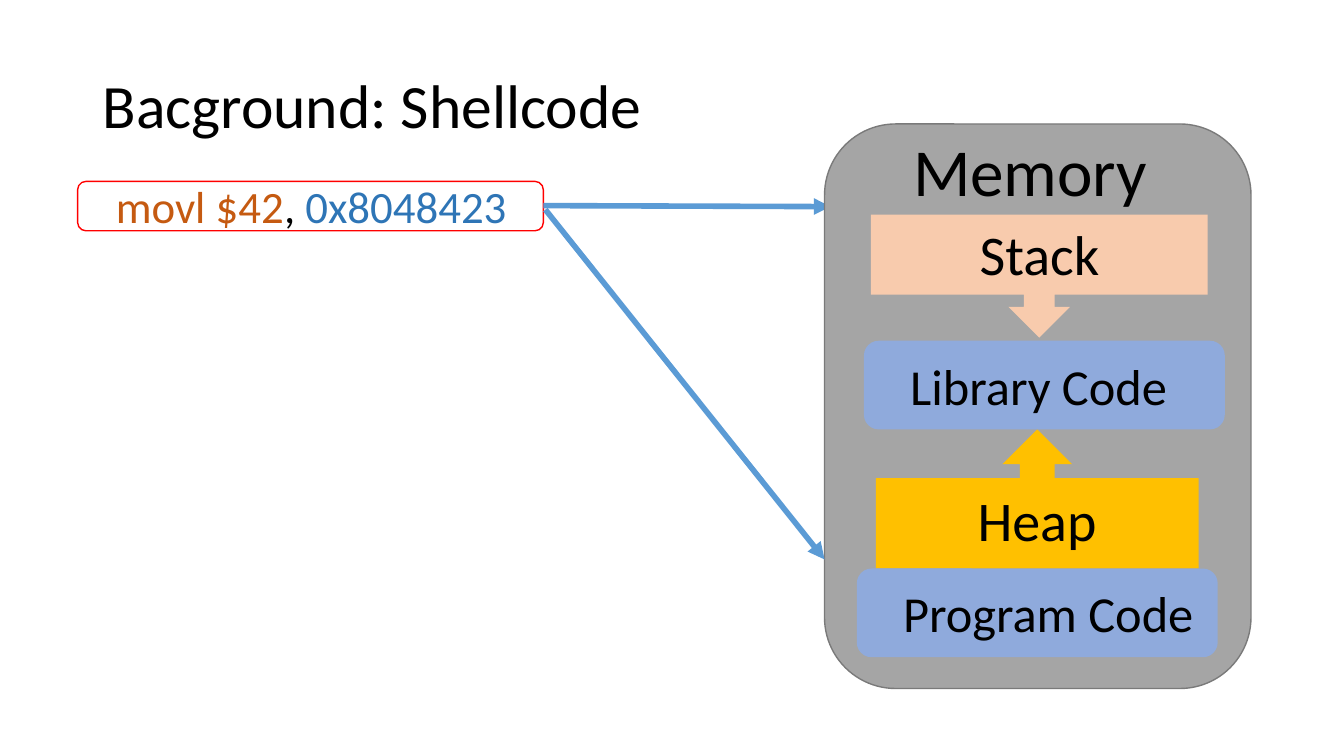
"""Build the shellcode background slide with its memory layout diagram."""
from dataclasses import dataclass

from lxml import etree
from pptx import Presentation
from pptx import util as u
from pptx.dml.color import RGBColor
from pptx.enum import shapes, text
from pptx.oxml import ns


@dataclass(frozen=True)
class Theme:
    """Colours, type sizes and line widths of the slide."""
    font: str = "Calibri"
    ink: str = "000000"
    paper: str = "FFFFFF"
    instruction: str = "C55A11"
    address: str = "2E75B6"
    frame: str = "FF0000"
    arrow: str = "5B9BD5"
    memory: str = "A5A5A5"
    memory_edge: str = "7A7A7A"
    stack: str = "F8CBAD"
    heap: str = "FFC000"
    code: str = "8FAADC"
    command_size: int = 32
    code_size: int = 36
    region_size: int = 40
    title_size: int = 44
    memory_size: int = 48
    thin: int = 1
    thick: int = 4


THEME = Theme()
WIDTH, HEIGHT = u.Inches(13.33), u.Inches(7.5)
CODE_SIZE = (26.85, 11.73)
CODE_LABEL_SIZE = (24.15, 9.47)
CODE_LABEL_OFFSET = (2.7, 1.2)


def across(percent):
    """Turn a percentage of the slide's width into a length."""
    return u.Emu(round(WIDTH * percent / 100))


def down(percent):
    """Turn a percentage of the slide's height into a length."""
    return u.Emu(round(HEIGHT * percent / 100))


def place(area):
    """Turn left, top, width and height in percent into lengths."""
    left, top, width, height = area
    return across(left), down(top), across(width), down(height)


def add_text(page, area, spans, size, wrap=True, anchor=text.MSO_ANCHOR.TOP, spacing=None):
    """Add one paragraph made of (wording, colour) spans."""
    box = page.shapes.add_textbox(*place(area))
    frame = box.text_frame
    frame.word_wrap = wrap
    frame.vertical_anchor = anchor
    para = frame.paragraphs[0]
    para.line_spacing = spacing
    for wording, colour in spans:
        span = para.add_run()
        span.text = wording
        span.font.name = THEME.font
        span.font.size = u.Pt(size)
        span.font.color.rgb = RGBColor.from_string(colour)


def add_block(page, area, fill, kind=shapes.MSO_SHAPE.ROUNDED_RECTANGLE, edge=None):
    """Add a filled shape, outlined when an edge colour is given."""
    block = page.shapes.add_shape(kind, *place(area))
    block.shadow.inherit = False
    block.fill.solid()
    block.fill.fore_color.rgb = RGBColor.from_string(fill)
    if edge:
        block.line.color.rgb = RGBColor.from_string(edge)
        block.line.width = u.Pt(THEME.thin)
    else:
        block.line.fill.background()


def add_arrow(page, start, end):
    """Add a straight arrow between two points."""
    arrow = page.shapes.add_connector(
        shapes.MSO_CONNECTOR.STRAIGHT,
        across(start[0]), down(start[1]), across(end[0]), down(end[1]))
    arrow.line.color.rgb = RGBColor.from_string(THEME.arrow)
    arrow.line.width = u.Pt(THEME.thick)
    etree.SubElement(arrow.line._get_or_add_ln(), ns.qn("a:tailEnd"), type="triangle")
    etree.SubElement(arrow._element.spPr, ns.qn("a:effectLst"))


def add_region(page, name, area, label_area, fill, kind):
    """Add a growing memory region with its label."""
    add_block(page, area, fill, kind)
    add_text(page, label_area, [(name, THEME.ink)], THEME.region_size, wrap=False)


def add_code(page, name, left, top):
    """Add a code segment with its label."""
    shift_x, shift_y = CODE_LABEL_OFFSET
    add_block(page, (left, top, *CODE_SIZE), THEME.code)
    add_text(page, (left + shift_x, top + shift_y, *CODE_LABEL_SIZE),
             [(name, THEME.ink)], THEME.code_size)


def main():
    """Build and save the slide."""
    deck = Presentation()
    deck.slide_width, deck.slide_height = WIDTH, HEIGHT
    page = deck.slides.add_slide(deck.slide_layouts[6])

    add_text(page, (6.9, 4.67, 86.25, 19.33), [("Bacground: Shellcode", THEME.ink)],
             THEME.title_size, anchor=text.MSO_ANCHOR.MIDDLE, spacing=0.9)
    add_block(page, (5.78, 24, 34.65, 6.53), THEME.paper, edge=THEME.frame)
    add_text(page, (7.88, 22.93, 31.13, 8.53),
             [("movl $42", THEME.instruction), (", ", THEME.ink), ("0x8048423", THEME.address)],
             THEME.command_size)
    add_arrow(page, (40.43, 27.2), (61.8, 27.33))

    add_block(page, (61.35, 16.4, 31.73, 74.67), THEME.memory, edge=THEME.memory_edge)
    add_text(page, (67.2, 16.4, 26.1, 12.13), [("Memory", THEME.ink)], THEME.memory_size)
    add_region(page, "Stack", (64.8, 28.4, 25.05, 16.27), (72.15, 28.4, 10.43, 10.27),
               THEME.stack, shapes.MSO_SHAPE.DOWN_ARROW_CALLOUT)
    add_region(page, "Heap", (65.18, 56.8, 24, 18.4), (72, 63.6, 10.35, 10.27),
               THEME.heap, shapes.MSO_SHAPE.UP_ARROW_CALLOUT)
    add_code(page, "Library Code", 64.28, 45.07)
    add_code(page, "Program Code", 63.75, 75.2)
    add_arrow(page, (40.58, 27.73), (61.35, 74))

    deck.save("out.pptx")


if __name__ == "__main__":
    main()
